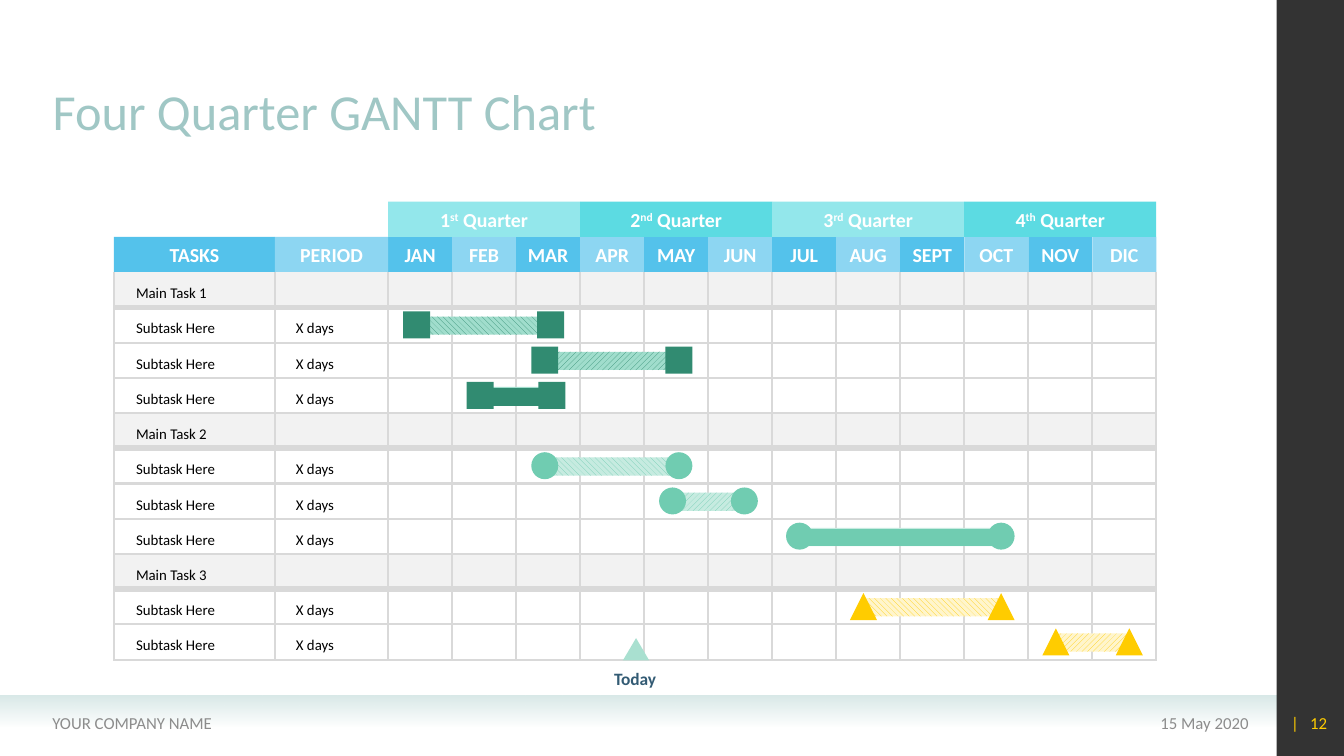
from dataclasses import dataclass
from itertools import cycle

from lxml.etree import SubElement
from pptx import Presentation
from pptx.dml.color import RGBColor
from pptx.enum.dml import MSO_PATTERN as Pattern
from pptx.enum.shapes import MSO_CONNECTOR, MSO_SHAPE as Preset
from pptx.enum.text import MSO_ANCHOR as Anchor, MSO_AUTO_SIZE, PP_ALIGN as Align
from pptx.oxml.ns import qn
from pptx.util import Cm, Pt

COLORS = {
    "title": "A0C7C5", "footer": "8C8C8C", "band": "D9E9E8", "black": "000000",
    "white": "FFFFFF", "blue": "54C2EB", "sky": "8DD6F2", "aqua": "93E7EB",
    "turquoise": "5CDBE2", "shade": "F2F2F2", "grid": "D9D9D9", "navy": "335B74",
    "today": "A9E0D0", "green": "318B71", "green_pale": "A0DDCC", "mint": "70CCB1",
    "mint_pale": "C6EBE0", "yellow": "FFCC00", "yellow_pale": "FFF5CC",
}
FONT = "Calibri"
GRID_LEFT, PERIOD_LEFT, MONTHS_LEFT, GRID_RIGHT = 2.87, 6.93, 9.78, 29.14
QUARTERS_TOP, HEADER_HEIGHT = 5.08, 0.89
MONTHS_TOP = QUARTERS_TOP + HEADER_HEIGHT
GRID_TOP, GRID_BOTTOM = 6.86, 16.62
MARKER_SIZE, BAR_HEIGHT = 0.68, 0.46

QUARTERS = ["1^st^ Quarter", "2^nd^ Quarter", "3^rd^ Quarter", "4^th^ Quarter"]
MONTHS = ["JAN", "FEB", "MAR", "APR", "MAY", "JUN",
          "JUL", "AUG", "SEPT", "OCT", "NOV", "DIC"]
SUBTASK_COUNTS = [3, 3, 2]
TASKS = [label for number, count in enumerate(SUBTASK_COUNTS, 1)
         for label in [f"Main Task {number}"] + ["Subtask Here"] * count]
MONTH_WIDTH = (GRID_RIGHT - MONTHS_LEFT) / len(MONTHS)
ROW_HEIGHT = (GRID_BOTTOM - GRID_TOP) / len(TASKS)


@dataclass(frozen=True)
class Phase:
    marker: Preset
    color: str
    pale: str
    overhang: float = 0


@dataclass(frozen=True)
class Bar:
    row: int
    start: float
    end: float
    pattern: Pattern
    phase: Phase


@dataclass(frozen=True)
class FooterItem:
    text: str
    left: float
    width: float
    color: str
    align: Align


FIRST = Phase(Preset.RECTANGLE, "green", "green_pale", 0.32)
SECOND = Phase(Preset.OVAL, "mint", "mint_pale")
THIRD = Phase(Preset.ISOSCELES_TRIANGLE, "yellow", "yellow_pale")
DOWN, UP = Pattern.WIDE_DOWNWARD_DIAGONAL, Pattern.WIDE_UPWARD_DIAGONAL
SOLID = Pattern.DARK_HORIZONTAL

BARS = [
    Bar(1, 10.5, 13.88, DOWN, FIRST),
    Bar(2, 13.73, 17.11, UP, FIRST),
    Bar(3, 12.1, 13.91, SOLID, FIRST),
    Bar(5, 13.73, 17.11, DOWN, SECOND),
    Bar(6, 16.95, 18.76, UP, SECOND),
    Bar(7, 20.15, 25.23, SOLID, SECOND),
    Bar(9, 21.76, 25.23, DOWN, THIRD),
    Bar(10, 26.61, 28.46, UP, THIRD),
]
FOOTER = [
    FooterItem("15 May 2020", 23.11, 8.61, "footer", Align.RIGHT),
    FooterItem("YOUR COMPANY NAME", 1.07, 12.45, "footer", Align.LEFT),
    FooterItem("|   12", 32, 1.7, "yellow", Align.RIGHT),
]


def rgb(color: str) -> RGBColor:
    return RGBColor.from_string(COLORS[color])


def write(frame, text: str, *, size: float, color: str, bold: bool = False,
          align: Align = Align.LEFT, anchor: Anchor = Anchor.MIDDLE,
          wrap: bool = True, spacing: float = 1, before: float = 0) -> None:
    frame.auto_size = MSO_AUTO_SIZE.NONE
    frame.word_wrap = wrap
    frame.vertical_anchor = anchor
    paragraph = frame.paragraphs[0]
    paragraph.alignment = align
    paragraph.line_spacing = spacing
    paragraph.space_before = Pt(before)
    for index, part in enumerate(text.split("^")):
        run = paragraph.add_run()
        run.text = part
        run.font.name, run.font.size, run.font.bold = FONT, Pt(size), bold
        run.font.color.rgb = rgb(color)
        if index % 2:
            run.font._element.set("baseline", "30000")


def add_label(slide, text: str, left: float, top: float,
              width: float, height: float, **style) -> None:
    box = slide.shapes.add_textbox(Cm(left), Cm(top), Cm(width), Cm(height))
    write(box.text_frame, text, **style)


def add_block(slide, preset: Preset, left: float, top: float,
              width: float, height: float, color: str):
    block = slide.shapes.add_shape(preset, Cm(left), Cm(top), Cm(width), Cm(height))
    block.shadow.inherit = False
    block.line.fill.background()
    block.fill.solid()
    block.fill.fore_color.rgb = rgb(color)
    return block


def add_header(slide, text: str, left: float, top: float,
               width: float, color: str) -> None:
    cell = add_block(slide, Preset.RECTANGLE, left, top, width, HEADER_HEIGHT, color)
    frame = cell.text_frame
    frame.margin_left = frame.margin_right = 0
    write(frame, text, size=14.2, color="white", bold=True,
          align=Align.CENTER, wrap=False)


def add_rule(slide, x1: float, y1: float, x2: float, y2: float, weight: float) -> None:
    rule = slide.shapes.add_connector(
        MSO_CONNECTOR.STRAIGHT, Cm(x1), Cm(y1), Cm(x2), Cm(y2))
    rule.line.color.rgb = rgb("grid")
    rule.line.width = Pt(weight)
    SubElement(rule._element.spPr, qn("a:effectLst"))


def set_last_opacity(block, percent: int) -> None:
    last_color = list(block._element.spPr.iter(qn("a:srgbClr")))[-1]
    SubElement(last_color, qn("a:alpha"), val=str(percent * 1000))


def add_frame(slide) -> None:
    band = add_block(slide, Preset.RECTANGLE, 0, 17.53, 32.18, 0.79, "band")
    band.fill.gradient()
    band.fill.gradient_angle = 270
    for stop in band.fill.gradient_stops:
        stop.color.rgb = rgb("band")
    set_last_opacity(band, 0)
    sidebar = add_block(slide, Preset.RECTANGLE, 32.17, 0, 1.7, 19.05, "black")
    set_last_opacity(sidebar, 80)
    for item in FOOTER:
        add_label(slide, item.text, item.left, 17.7, item.width, 1.02,
                  size=12, color=item.color, align=item.align)


def add_headers(slide) -> None:
    for index, (month, color) in enumerate(zip(MONTHS, cycle(["blue", "sky"]))):
        add_header(slide, month, MONTHS_LEFT + index * MONTH_WIDTH,
                   MONTHS_TOP, MONTH_WIDTH, color)
    add_header(slide, "TASKS", GRID_LEFT, MONTHS_TOP, PERIOD_LEFT - GRID_LEFT, "blue")
    add_header(slide, "PERIOD", PERIOD_LEFT, MONTHS_TOP,
               MONTHS_LEFT - PERIOD_LEFT, "sky")
    quarter_width = 3 * MONTH_WIDTH
    for index, (quarter, color) in enumerate(zip(QUARTERS, cycle(["aqua", "turquoise"]))):
        add_header(slide, quarter, MONTHS_LEFT + index * quarter_width,
                   QUARTERS_TOP, quarter_width, color)


def add_grid(slide) -> None:
    rows = [(GRID_TOP + index * ROW_HEIGHT, task, task.startswith("Main"))
            for index, task in enumerate(TASKS)]
    for top, _, is_main in rows:
        if is_main:
            add_block(slide, Preset.RECTANGLE, GRID_LEFT, top,
                      GRID_RIGHT - GRID_LEFT, ROW_HEIGHT, "shade")
    month_edges = [MONTHS_LEFT + index * MONTH_WIDTH for index in range(len(MONTHS) + 1)]
    for x in [GRID_LEFT, PERIOD_LEFT, *month_edges]:
        add_rule(slide, x, GRID_BOTTOM + 0.03, x, GRID_TOP, 1.5)
    for top, task, is_main in rows:
        bottom = top + ROW_HEIGHT
        add_rule(slide, GRID_LEFT, bottom, GRID_RIGHT, bottom, 4 if is_main else 1.5)
        cells = [(task, 3.18, 2.77)] + ([] if is_main else [("X days", 7.21, 2)])
        for text, left, width in cells:
            add_label(slide, text, left, top + 0.17, width, 0.71,
                      size=10.6, color="black", anchor=Anchor.TOP)


def add_bar(slide, bar: Bar) -> None:
    phase, top = bar.phase, GRID_TOP + bar.row * ROW_HEIGHT
    span = add_block(slide, Preset.RECTANGLE, bar.start - phase.overhang, top + 0.23,
                     bar.end - bar.start + 2 * phase.overhang, BAR_HEIGHT, phase.color)
    span.fill.patterned()
    span.fill.pattern = bar.pattern
    span.fill.fore_color.rgb = rgb(phase.color)
    span.fill.back_color.rgb = rgb(phase.pale)
    for center in (bar.start, bar.end):
        add_block(slide, phase.marker, center - MARKER_SIZE / 2, top + 0.1,
                  MARKER_SIZE, MARKER_SIZE, phase.color)


def main() -> None:
    deck = Presentation()
    deck.slide_width, deck.slide_height = Cm(33.87), Cm(19.05)
    slide = deck.slides.add_slide(deck.slide_layouts[5])
    add_frame(slide)
    title = slide.shapes.title
    title.left, title.top, title.width, title.height = Cm(1.07), Cm(0.51), Cm(28.47), Cm(3.18)
    write(title.text_frame, "Four Quarter GANTT Chart", size=36, color="title",
          anchor=Anchor.BOTTOM, spacing=0.9)
    add_headers(slide)
    add_grid(slide)
    add_block(slide, Preset.ISOSCELES_TRIANGLE, 15.7, 16.08, 0.66, 0.56, "today")
    add_label(slide, "Today", 15.32, 16.69, 1.37, 0.69, size=12.4, color="navy",
              bold=True, align=Align.CENTER, wrap=False, spacing=1.2, before=10)
    for bar in BARS:
        add_bar(slide, bar)
    deck.save("out.pptx")


if __name__ == "__main__":
    main()
